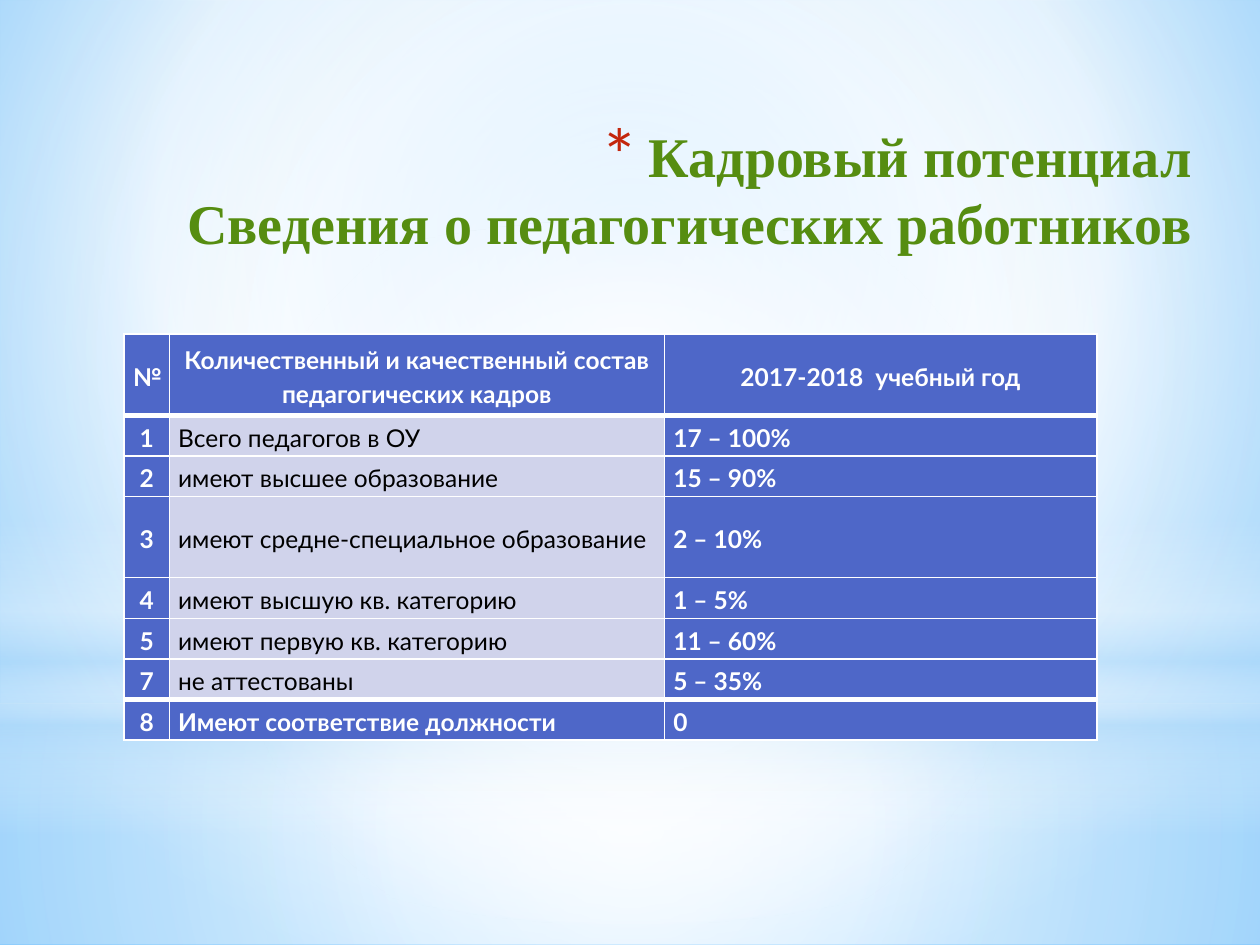
import pptx
import pptx.util
import pptx.dml.color
import pptx.enum.shapes
import pptx.enum.text
import pptx.oxml
import pptx.oxml.ns

Pt = pptx.util.Pt
SHAPES = pptx.enum.shapes.MSO_SHAPE
ALIGN = pptx.enum.text.PP_ALIGN
MIDDLE = pptx.enum.text.MSO_ANCHOR.MIDDLE
NAMESPACE = pptx.oxml.ns.nsdecls("a")

WHITE, BLACK, PALE_BLUE = "FFFFFF", "000000", "B4DCFA"
INDIGO, LAVENDER, GREEN, RED = "4E67C8", "D0D3EB", "568D11", "C3260C"

ROWS = [
    ("№", "Количественный и качественный состав педагогических кадров",
     "2017-2018  учебный год"),
    ("1", "Всего педагогов в ОУ", "17 – 100%"),
    ("2", "имеют высшее образование", "15 – 90%"),
    ("3", "имеют средне-специальное образование", "2 – 10%"),
    ("4", "имеют высшую кв. категорию", "1 – 5%"),
    ("5", "имеют первую кв. категорию", "11 – 60%"),
    ("7", "не аттестованы", "5 – 35%"),
    ("8", "Имеют соответствие должности", "0"),
]
COLUMN_WIDTHS = [25.9, 283, 247]
ROW_HEIGHTS = [46.6, 23.2, 23.2, 46.4, 23.2, 23.2, 23.2, 23.2]


def color(value):
    return pptx.dml.color.RGBColor.from_string(value)


def set_format(target, values):
    for name, value in values.items():
        setattr(target, name, value)


def set_font(font, font_color, **values):
    set_format(font, values)
    font.color.rgb = color(font_color)


def set_gradient(fill, owner, stops, focus=None):
    """Radial gradient around the focus rectangle, or top to bottom without one."""
    fill.gradient()
    gradient = owner.find(".//" + pptx.oxml.ns.qn("a:gradFill"))
    gradient.clear()
    stop_xml = "".join(
        f'<a:gs pos="{position * 1000}"><a:srgbClr val="{value}">'
        f'<a:alpha val="{opacity * 1000}"/></a:srgbClr></a:gs>'
        for position, value, opacity in stops)
    gradient.append(pptx.oxml.parse_xml(f"<a:gsLst {NAMESPACE}>{stop_xml}</a:gsLst>"))
    if focus:
        sides = " ".join(f'{side}="{part * 1000}"' for side, part in zip("ltrb", focus))
        direction = f'<a:path {NAMESPACE} path="circle"><a:fillToRect {sides}/></a:path>'
    else:
        direction = f'<a:lin {NAMESPACE} ang="5400000" scaled="0"/>'
    gradient.append(pptx.oxml.parse_xml(direction))


def add_glow(page, kind, box, stops, focus=None):
    shape = page.shapes.add_shape(kind, *map(Pt, box))
    shape.shadow.inherit = False
    shape.line.fill.background()
    set_gradient(shape.fill, shape._element, stops, focus)


def add_backdrop(page, box):
    left, top, width, height = box
    center = (50, 50, 50, 50)
    horizon = top + 402
    set_gradient(page.background.fill, page._element,
                 [(0, "9ED5FF", 100), (60, WHITE, 100), (100, "5BB9FF", 100)],
                 (20, 10, 20, 60))
    # Floor and sky
    add_glow(page, SHAPES.RECTANGLE, (left, horizon, width, top + height - horizon),
             [(0, WHITE, 91), (37, WHITE, 76), (100, PALE_BLUE, 79)], center)
    add_glow(page, SHAPES.RECTANGLE, (left, top, width, horizon - top),
             [(0, WHITE, 89), (48, WHITE, 62), (100, PALE_BLUE, 79)], center)
    # Soft band along the horizon
    add_glow(page, SHAPES.RECTANGLE, (left, horizon - 105, width, 180),
             [(0, WHITE, 0), (29, WHITE, 30), (45, PALE_BLUE, 40),
              (55, WHITE, 26), (65, PALE_BLUE, 60), (100, WHITE, 0)])
    # Central light
    add_glow(page, SHAPES.OVAL, (left, top + 126, width, 402),
             [(0, WHITE, 100), (56, WHITE, 0)], center)


def add_title(page, box):
    frame = page.shapes.add_textbox(*map(Pt, box)).text_frame
    set_format(frame, {"word_wrap": True, "vertical_anchor": MIDDLE})
    para = frame.paragraphs[0]
    para.alignment = ALIGN.RIGHT
    for index, line in enumerate(["Кадровый потенциал",
                                  "Сведения о педагогических работников"]):
        if index:
            para.add_line_break()
        span = para.add_run()
        span.text = line
        set_font(span.font, GREEN, name="Times New Roman", size=Pt(32), bold=True)
    # Red asterisk bullet
    properties = para._p.get_or_add_pPr()
    properties.set("marL", str(Pt(25.2)))
    properties.set("indent", str(-Pt(25.2)))
    for bullet in (f'<a:buClr {NAMESPACE}><a:srgbClr val="{RED}"/></a:buClr>',
                   f'<a:buSzPct {NAMESPACE} val="128000"/>',
                   f'<a:buFont {NAMESPACE} typeface="Lato"/>',
                   f'<a:buChar {NAMESPACE} char="*"/>'):
        properties.append(pptx.oxml.parse_xml(bullet))


def set_borders(cell, top, bottom):
    properties = cell._tc.get_or_add_tcPr()
    widths = {"lnL": 1, "lnR": 1, "lnT": top, "lnB": bottom}
    for index, (side, width) in enumerate(widths.items()):
        properties.insert(index, pptx.oxml.parse_xml(
            f'<a:{side} {NAMESPACE} w="{Pt(width)}"><a:solidFill>'
            f'<a:srgbClr val="{WHITE}"/></a:solidFill></a:{side}>'))


def add_staff_table(page, box):
    table = page.shapes.add_table(len(ROWS), len(COLUMN_WIDTHS), *map(Pt, box)).table
    for column, width in zip(table.columns, COLUMN_WIDTHS):
        column.width = Pt(width)
    for row, height in zip(table.rows, ROW_HEIGHTS):
        row.height = Pt(height)
    last = len(ROWS) - 1
    for row_index, texts in enumerate(ROWS):
        for column_index, text in enumerate(texts):
            cell = table.cell(row_index, column_index)
            plain = column_index == 1 and 0 < row_index < last
            centered = row_index == 0 or column_index == 0
            set_format(cell, {"text": text, "vertical_anchor": MIDDLE,
                              "margin_left": Pt(5), "margin_right": Pt(5),
                              "margin_top": 0, "margin_bottom": 0})
            cell.fill.solid()
            cell.fill.fore_color.rgb = color(LAVENDER if plain else INDIGO)
            para = cell.text_frame.paragraphs[0]
            set_format(para, {"alignment": ALIGN.CENTER if centered else ALIGN.LEFT,
                              "line_spacing": 1.15})
            set_font(para.runs[0].font, BLACK if plain else WHITE,
                     name="Lato", size=Pt(14), bold=not plain)
            # Thick rules below the heading and above the last row
            set_borders(cell, top=3 if row_index in (1, last) else 1,
                        bottom=3 if row_index in (0, last - 1) else 1)


def main():
    deck = pptx.Presentation()
    set_format(deck, {"slide_width": Pt(720), "slide_height": Pt(540)})
    page = deck.slides.add_slide(deck.slide_layouts[6])
    add_backdrop(page, (0, 0, 720, 540))
    add_title(page, (70.6, 62.6, 617.8, 90))
    add_staff_table(page, (70.9, 190.8, sum(COLUMN_WIDTHS), sum(ROW_HEIGHTS)))
    deck.save("out.pptx")


if __name__ == "__main__":
    main()
